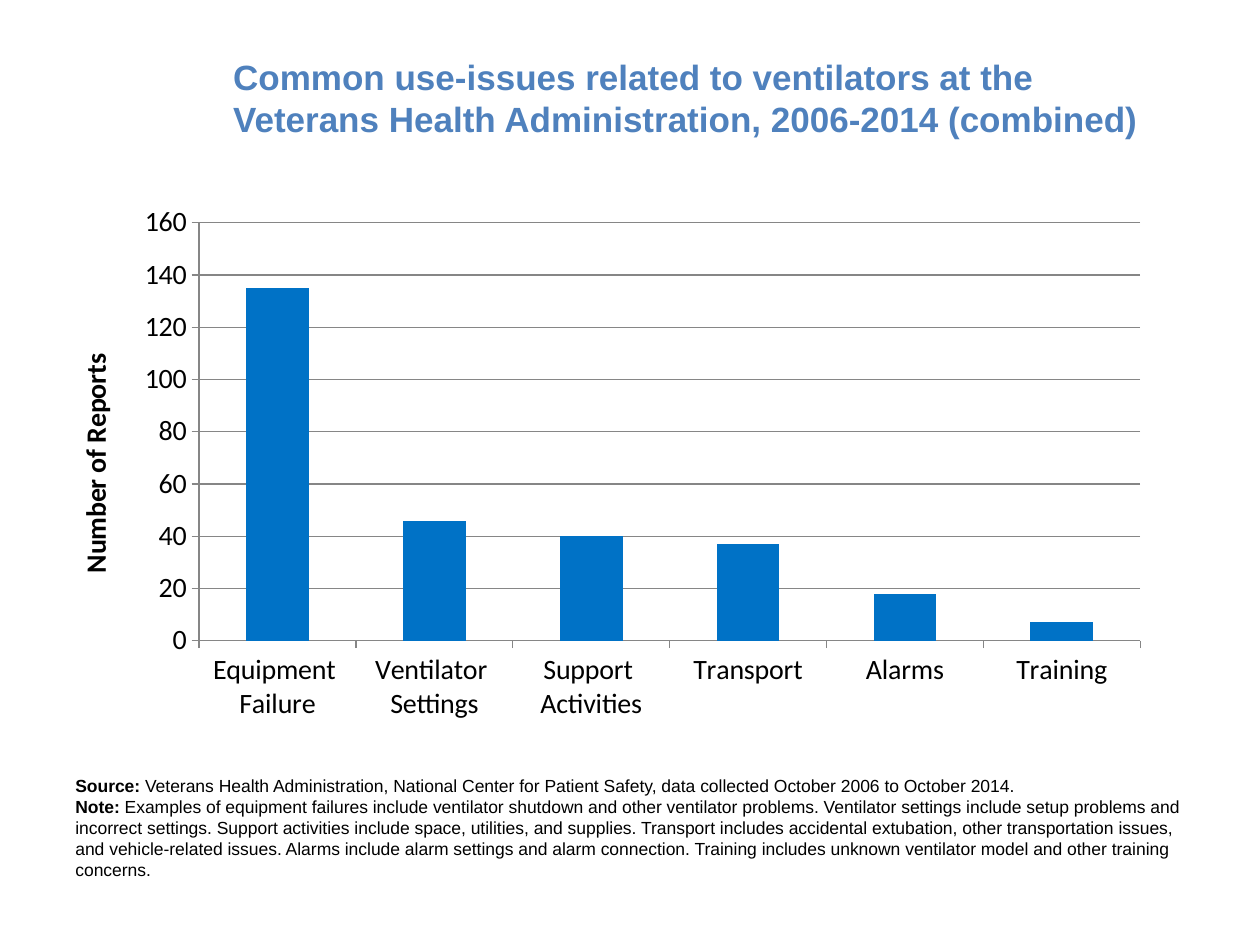
from dataclasses import dataclass

from lxml.etree import SubElement
from pptx import Presentation
from pptx.chart.data import CategoryChartData
from pptx.dml.color import RGBColor
from pptx.enum.chart import XL_CHART_TYPE, XL_TICK_MARK
from pptx.enum.shapes import MSO_SHAPE
from pptx.enum.text import MSO_ANCHOR, PP_ALIGN
from pptx.oxml.ns import qn
from pptx.util import Pt


@dataclass(frozen=True)
class Theme:
    title: RGBColor = RGBColor.from_string("4F81BD")
    text: RGBColor = RGBColor.from_string("000000")
    paper: RGBColor = RGBColor.from_string("FFFFFF")
    bar: RGBColor = RGBColor.from_string("0072C6")
    grid: RGBColor = RGBColor.from_string("868686")
    text_font: str = "Arial"
    axis_font: str = "Calibri"
    title_size: Pt = Pt(20)
    note_size: Pt = Pt(10)
    axis_size: Pt = Pt(16)


theme = Theme()
PX = 9144  # EMU per px, 100 px to the inch


def box(*lengths):
    return [n * PX for n in lengths]


def set_font(font, name, size, color, bold=None):
    font.name, font.size, font.bold = name, size, bold
    font.color.rgb = color


prs = Presentation()
prs.slide_width, prs.slide_height = box(1000, 750)
slide = prs.slides.add_slide(prs.slide_layouts[5])

# Title
title = slide.shapes.title
title.left, title.top, title.width, title.height = box(175, 30, 775, 95)
tf = title.text_frame
tf.text = ("Common use-issues related to ventilators at the "
           "Veterans Health Administration, 2006-2014 (combined)")
tf.word_wrap = True
tf.vertical_anchor = MSO_ANCHOR.MIDDLE
p = tf.paragraphs[0]
p.alignment = PP_ALIGN.LEFT
set_font(p.font, theme.text_font, theme.title_size, theme.title, True)

# Source and note
notes = [
    ("Source: ", "Veterans Health Administration, National Center for Patient Safety, "
     "data collected October 2006 to October 2014."),
    ("Note: ", "Examples of equipment failures include ventilator shutdown and other "
     "ventilator problems. Ventilator settings include setup problems and incorrect "
     "settings. Support activities include space, utilities, and supplies. Transport "
     "includes accidental extubation, other transportation issues, and vehicle-related "
     "issues. Alarms include alarm settings and alarm connection. Training includes "
     "unknown ventilator model and other training concerns."),
]
sp = slide.shapes.add_shape(MSO_SHAPE.RECTANGLE, *box(50, 610, 900, 90))
sp.shadow.inherit = False
sp.fill.solid()
sp.fill.fore_color.rgb = theme.paper
sp.line.fill.background()
tf = sp.text_frame
tf.word_wrap = True
tf.vertical_anchor = MSO_ANCHOR.TOP
for i, (label, body) in enumerate(notes):
    p = tf.add_paragraph() if i else tf.paragraphs[0]
    p.alignment = PP_ALIGN.LEFT
    set_font(p.font, theme.text_font, theme.note_size, theme.text)
    for text, bold in ((label, True), (body, False)):
        r = p.add_run()
        r.text = text
        r.font.bold = bold
        r.font.color.rgb = theme.text

# Chart
reports = {
    "Equipment \nFailure": 135,
    "Ventilator \nSettings": 46,
    "Support \nActivities": 40,
    "Transport": 37,
    "Alarms": 18,
    "Training": 7,
}
data = CategoryChartData(number_format="0")
data.categories = list(reports)
data.add_series("Series 1", list(reports.values()))
chart = slide.shapes.add_chart(
    XL_CHART_TYPE.COLUMN_CLUSTERED, *box(50, 160, 900, 420), data).chart
chart.has_legend = False
chart.has_title = False
set_font(chart.font, theme.text_font, theme.note_size, theme.text)

plot = chart.plots[0]
plot.gap_width = 150
plot.vary_by_categories = False
fill = plot.series[0].format.fill
fill.solid()
fill.fore_color.rgb = theme.bar

# Axes
for axis in (chart.category_axis, chart.value_axis):
    axis.major_tick_mark = XL_TICK_MARK.OUTSIDE
    axis.minor_tick_mark = XL_TICK_MARK.NONE
    axis.format.line.color.rgb = theme.grid
    set_font(axis.tick_labels.font, theme.axis_font, theme.axis_size, theme.text, False)
axis = chart.value_axis
axis.minimum_scale, axis.maximum_scale, axis.major_unit = 0, 160, 20
axis.has_major_gridlines = True
axis.major_gridlines.format.line.color.rgb = theme.grid
axis.tick_labels.number_format = "0"
axis.tick_labels.number_format_is_linked = False
tf = axis.axis_title.text_frame
tf.text = "Number of Reports"
set_font(tf.paragraphs[0].font, theme.axis_font, theme.axis_size, theme.text, True)

# Fixed inner plot area
area = chart.element.find(".//" + qn("c:plotArea"))
layout = area.find(qn("c:layout"))
if layout is None:
    layout = SubElement(area, qn("c:layout"))
    area.insert(0, layout)
manual = SubElement(layout, qn("c:manualLayout"))
for tag, val in (("layoutTarget", "inner"), ("xMode", "edge"), ("yMode", "edge"),
                 ("x", 0.12), ("y", 0.04), ("w", 0.83), ("h", 0.79)):
    SubElement(manual, qn("c:" + tag)).set("val", str(val))

prs.save("out.pptx")
